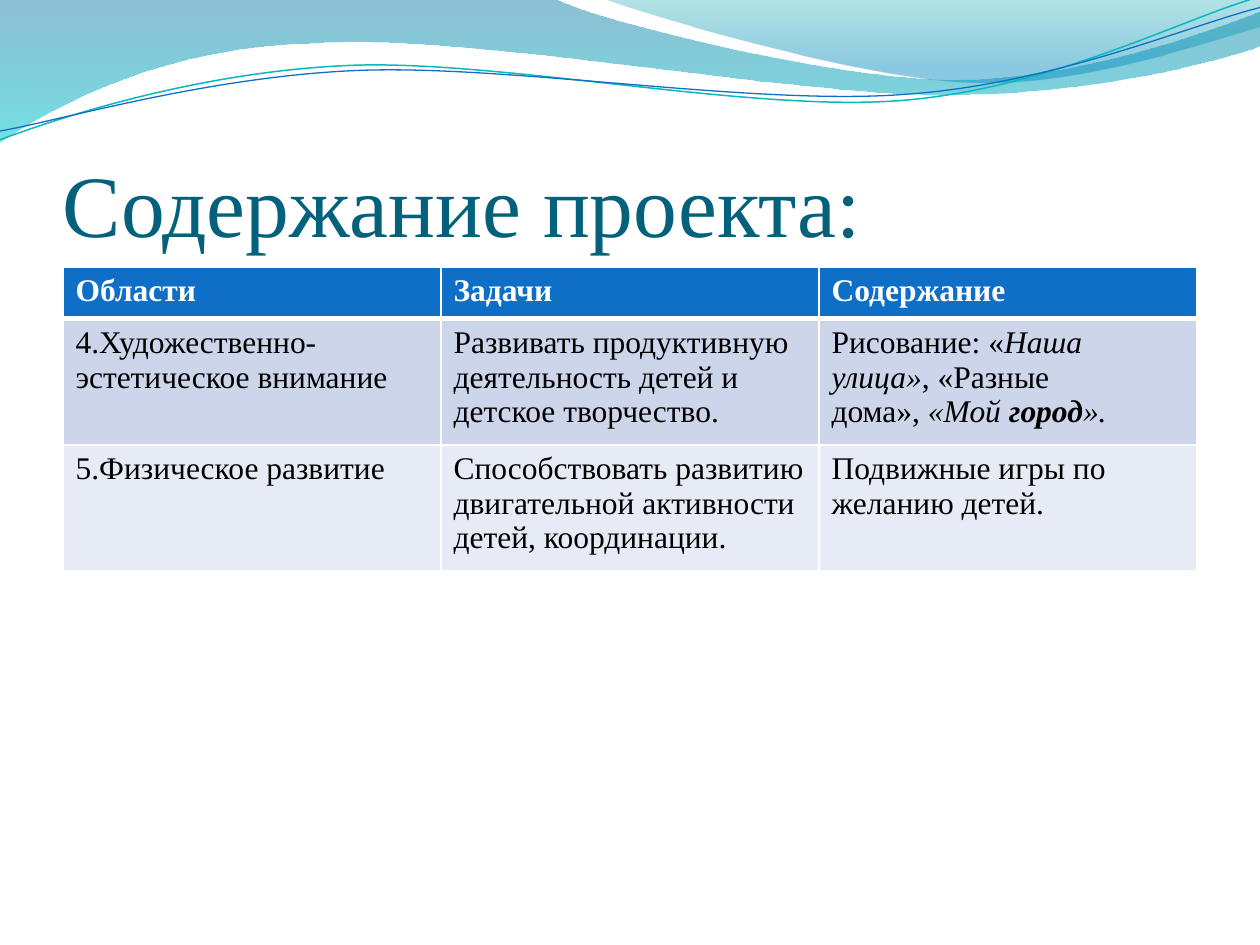
from lxml import etree
from pptx import Presentation
from pptx.dml.color import RGBColor
from pptx.enum.text import MSO_ANCHOR
from pptx.oxml.ns import qn
from pptx.util import Inches, Pt

BOTTOM = MSO_ANCHOR.BOTTOM
FONT = "Times New Roman"
NO_BREAK_SPACE = chr(160)
COLORS = {
    "title": "04617B", "header": "0F6FC6", "odd_row": "CCD5EA", "even_row": "E7EBF5",
    "white": "FFFFFF", "black": "000000", "teal_line": "0AB8BF", "blue_line": "0F6FC6",
    "wave_top": "0074A1", "wave_bottom": "00C6CF",
    "crest_top": "00A1A9", "crest_bottom": "008BBF",
}

# A pair is the end of a straight line, a sextet is a cubic curve.
WAVE = [(0, 0), (4.4, -0.01), (4.76, 0.17, 6.64, 0.63, 7.58, 0.63),
        (8.53, 0.63, 9.58, 0.26, 10, 0.09), (10.01, 0.36),
        (9.83, 0.44, 8.7, 0.76, 7.46, 0.75), (6.22, 0.75, 3.82, 0.28, 2.57, 0.34),
        (1.29, 0.36, 0.46, 0.83, -0.01, 1.13)]
CREST = [(4.79, -0.01), (5.09, 0.11, 6.82, 0.62, 7.69, 0.65),
         (8.56, 0.69, 9.61, 0.32, 10, 0.21), (10, 0)]
TEAL_CURVE = [(0, 1.11), (0.48, 0.93, 1.58, 0.57, 2.77, 0.52),
              (3.95, 0.47, 5.93, 0.89, 7.13, 0.8), (8.33, 0.71, 9.38, 0.15, 9.98, -0.02)]
BLUE_CURVE = [(0, 1.04), (0.47, 0.96, 1.64, 0.61, 2.83, 0.56),
              (4.03, 0.51, 5.97, 0.84, 7.17, 0.75), (8.36, 0.67, 9.41, 0.21, 10, 0.06)]

# A cell is a list of runs: text and font settings.
ITALIC = {"italic": True}
ROWS = [
    [[("Области", {})], [("Задачи", {})], [("Содержание", {})]],
    [[("4.Художественно-эстетическое внимание", {})],
     [("Развивать продуктивную деятельность детей и детское творчество.", {})],
     [("Рисование: «", {}), ("Наша улица»", ITALIC),
      (", «Разные дома»," + NO_BREAK_SPACE, {}), ("«Мой" + NO_BREAK_SPACE, ITALIC),
      ("город", {"italic": True, "bold": True}), ("».", ITALIC)]],
    [[("5.Физическое развитие", {})],
     [("Способствовать развитию двигательной активности детей, координации."
       + NO_BREAK_SPACE, {})],
     [("Подвижные игры по желанию детей.", {})]],
]


def rgb(name):
    return RGBColor.from_string(COLORS[name])


def add_outline(slide, segments, close):
    """Draw straight lines between the end points, then bend those that are curves."""
    ends = [(Inches(segment[-2]), Inches(segment[-1])) for segment in segments]
    builder = slide.shapes.build_freeform(*ends[0])
    builder.add_line_segments(ends[1:], close=close)
    shape = builder.convert_to_shape()
    shape.shadow.inherit = False
    lines = list(shape.element.iter(qn("a:lnTo")))
    for line, segment in zip(lines, segments[1:]):
        if len(segment) == 6:
            curve = etree.Element(qn("a:cubicBezTo"))
            for x, y in zip(segment[::2], segment[1::2]):
                etree.SubElement(curve, qn("a:pt"), x=str(Inches(x) - shape.left),
                                 y=str(Inches(y) - shape.top))
            line.getparent().replace(line, curve)
    return shape


def add_gradient_area(slide, segments, stops):
    """Stops are position, colour name and opacity in percent, from top to bottom."""
    shape = add_outline(slide, segments, True)
    shape.line.fill.background()
    shape.fill.gradient()
    shape.fill.gradient_angle = 270
    for stop, (position, color, _) in zip(shape.fill.gradient_stops, stops):
        stop.position = position
        stop.color.rgb = rgb(color)
    for color_element, (_, _, opacity) in zip(shape.element.iter(qn("a:srgbClr")), stops):
        etree.SubElement(color_element, qn("a:alpha"), val=str(opacity * 1000))


def add_curve(slide, segments, color, width):
    shape = add_outline(slide, segments, False)
    shape.fill.background()
    shape.line.color.rgb = rgb(color)
    shape.line.width = Pt(width)


def add_run(paragraph, text, color, **settings):
    run = paragraph.add_run()
    run.text = text
    run.font.color.rgb = rgb(color)
    for name, value in ({"name": FONT, "bold": False, "italic": False} | settings).items():
        setattr(run.font, name, value)


def add_title(slide, text):
    box = slide.shapes.add_textbox(Inches(0.5), Inches(0.77), Inches(9), Inches(1.25))
    frame_format = {"word_wrap": True, "vertical_anchor": BOTTOM, "margin_left": 0,
                    "margin_right": 0, "margin_top": Inches(0.05), "margin_bottom": 0}
    for name, value in frame_format.items():
        setattr(box.text_frame, name, value)
    add_run(box.text_frame.paragraphs[0], text, "title", size=Pt(50))


def set_borders(cell, widths):
    properties = cell._tc.get_or_add_tcPr()
    for side, width in zip("LRTB", widths):
        line = etree.SubElement(properties, qn(f"a:ln{side}"), w=str(Pt(width)))
        fill = etree.SubElement(line, qn("a:solidFill"))
        etree.SubElement(fill, qn("a:srgbClr"), val=COLORS["white"])


def add_content_table(slide):
    frame = slide.shapes.add_table(len(ROWS), len(ROWS[0]), Inches(0.5), Inches(2.12),
                                   Inches(9), Inches(0.41) * len(ROWS))
    frame.height = Inches(2.41)
    for row_index, row in enumerate(ROWS):
        header = row_index == 0
        fill = "header" if header else ("even_row", "odd_row")[row_index % 2]
        widths = (1, 1, 3 if row_index == 1 else 1, 3 if header else 1)
        for column_index, runs in enumerate(row):
            cell = frame.table.cell(row_index, column_index)
            set_borders(cell, widths)
            cell.fill.solid()
            cell.fill.fore_color.rgb = rgb(fill)
            for text, settings in runs:
                add_run(cell.text_frame.paragraphs[0], text, "white" if header else "black",
                        **({"size": Pt(18), "bold": header} | settings))


def main():
    presentation = Presentation()
    presentation.slide_width, presentation.slide_height = Inches(10), Inches(7.5)
    slide = presentation.slides.add_slide(presentation.slide_layouts[6])
    add_gradient_area(slide, WAVE, [(0, "wave_top", 45), (1, "wave_bottom", 55)])
    add_gradient_area(slide, CREST, [(0, "crest_top", 30), (0.8, "crest_bottom", 45)])
    add_curve(slide, TEAL_CURVE, "teal_line", 0.85)
    add_curve(slide, BLUE_CURVE, "blue_line", 0.75)
    add_title(slide, "Содержание проекта:")
    add_content_table(slide)
    presentation.save("out.pptx")


if __name__ == "__main__":
    main()
